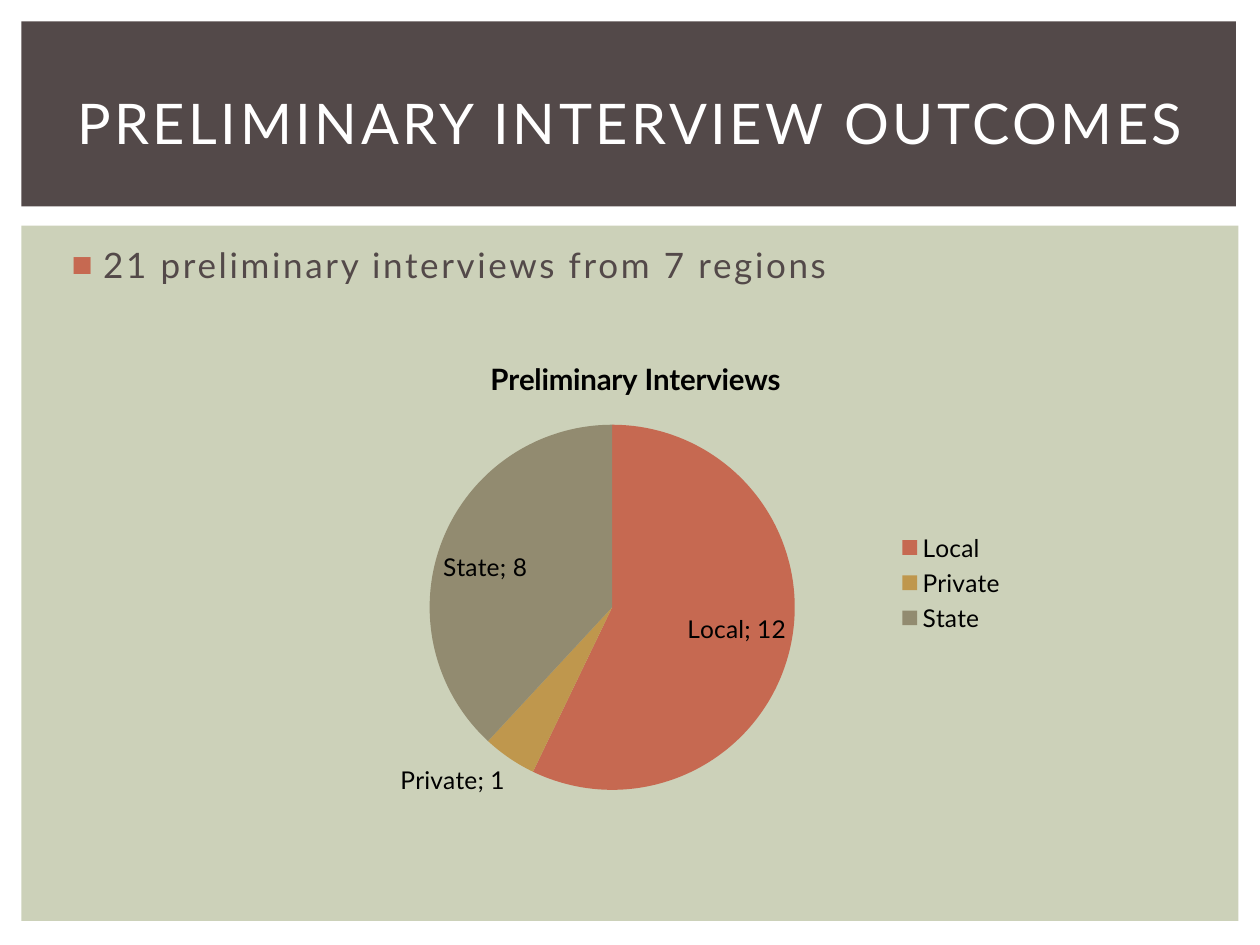
from lxml.etree import SubElement
from pptx import Presentation
from pptx.chart.data import CategoryChartData
from pptx.dml.color import RGBColor
from pptx.enum.chart import XL_CHART_TYPE, XL_LABEL_POSITION, XL_LEGEND_POSITION
from pptx.enum.shapes import MSO_SHAPE
from pptx.enum.text import MSO_ANCHOR, MSO_AUTO_SIZE, PP_ALIGN
from pptx.oxml import parse_xml
from pptx.oxml.ns import nsdecls, qn
from pptx.util import Pt

HUES = {"panel": "CCD1B9", "dark": "534949", "white": "FFFFFF", "black": "000000",
        "local": "C66951", "private": "BF974D", "state": "928B70"}
FACE = "Lato"


def tint(name):
    return RGBColor.from_string(HUES[name])


def style(item, **vals):
    for key, val in vals.items():
        setattr(item, key, val)


def set_font(font, size, hue, bold=False):
    style(font, name=FACE, size=Pt(size), bold=bold)
    font.color.rgb = tint(hue)


def place(shape, box):
    style(shape, **dict(zip(("left", "top", "width", "height"), map(Pt, box))))


def add_band(slide, box, hue, level):
    band = slide.shapes.add_shape(MSO_SHAPE.RECTANGLE, *map(Pt, box))
    band.shadow.inherit = False
    band.fill.solid()
    band.fill.fore_color.rgb = tint(hue)
    band.line.fill.background()
    # Slot the band behind the placeholders
    slide.shapes._spTree.insert(2 + level, band._element)


def fill_text(shape, box, text, size, hue, gap, align, anchor):
    place(shape, box)
    frame = shape.text_frame
    style(frame, word_wrap=True, auto_size=MSO_AUTO_SIZE.NONE, vertical_anchor=anchor)
    para = frame.paragraphs[0]
    para.alignment = align
    run = para.add_run()
    run.text = text
    set_font(run.font, size, hue)
    run.font._element.set("spc", str(gap))
    return para


def add_bullet(para, hue):
    props = para._p.get_or_add_pPr()
    props.set("marL", str(Pt(21.6)))
    props.set("indent", str(-Pt(18)))
    para.space_before = Pt(4)
    color = SubElement(props, qn("a:buClr"))
    SubElement(color, qn("a:srgbClr")).set("val", HUES[hue])
    SubElement(props, qn("a:buFont")).set("typeface", "Arial")
    SubElement(props, qn("a:buChar")).set("char", "■")


def set_plot(chart, x, y, w, h):
    area = chart._chartSpace.chart.plotArea
    for old in area.findall(qn("c:layout")):
        area.remove(old)
    spots = "".join(f'<c:{key} val="{val}"/>' for key, val in
                    (("layoutTarget", "inner"), ("xMode", "edge"), ("yMode", "edge"),
                     ("x", x), ("y", y), ("w", w), ("h", h)))
    area.insert(0, parse_xml(f"<c:layout {nsdecls('c')}><c:manualLayout>"
                             f"{spots}</c:manualLayout></c:layout>"))


def add_pie(slide, box, title, counts):
    data = CategoryChartData()
    data.categories = list(counts)
    data.add_series("Series 1", list(counts.values()))
    chart = slide.shapes.add_chart(XL_CHART_TYPE.PIE, *map(Pt, box), data).chart
    set_font(chart.font, 14, "black")

    # Title and legend
    chart.has_title = True
    head = chart.chart_title.text_frame
    head.text = title
    set_font(head.paragraphs[0].runs[0].font, 16.8, "black", True)
    chart.has_legend = True
    style(chart.legend, position=XL_LEGEND_POSITION.RIGHT, include_in_layout=False)
    set_font(chart.legend.font, 14, "black")

    # Slices and labels
    plot = chart.plots[0]
    style(plot, vary_by_categories=True, has_data_labels=True)
    for i, name in enumerate(counts):
        fill = plot.series[0].points[i].format.fill
        fill.solid()
        fill.fore_color.rgb = tint(name.lower())
    labels = plot.data_labels
    style(labels, show_value=True, show_category_name=True, show_percentage=False,
          position=XL_LABEL_POSITION.BEST_FIT)
    set_font(labels.font, 14, "black")
    set_plot(chart, 0.23, 0.18, 0.48, 0.74)


def main():
    deck = Presentation()
    style(deck, slide_width=Pt(720), slide_height=Pt(540))
    slide = deck.slides.add_slide(deck.slide_layouts[1])

    # Background bands
    add_band(slide, (12.25, 128.9, 695.5, 397.4), "panel", 0)
    add_band(slide, (12.25, 12.25, 694, 105.8), "dark", 1)

    # Title and list
    title, body = slide.placeholders
    fill_text(title, (30.2, 28.1, 660.2, 82.8), "PRELIMINARY INTERVIEW OUTCOMES",
              32, "white", 200, PP_ALIGN.CENTER, MSO_ANCHOR.MIDDLE)
    item = fill_text(body, (30.2, 135.4, 661.7, 347), "21 preliminary interviews from 7 regions",
                     20, "dark", 150, PP_ALIGN.LEFT, MSO_ANCHOR.TOP)
    add_bullet(item, "local")

    # Chart
    add_pie(slide, (144, 192, 438, 282), "Preliminary Interviews",
            {"Local": 12, "Private": 1, "State": 8})
    deck.save("out.pptx")


if __name__ == "__main__":
    main()
